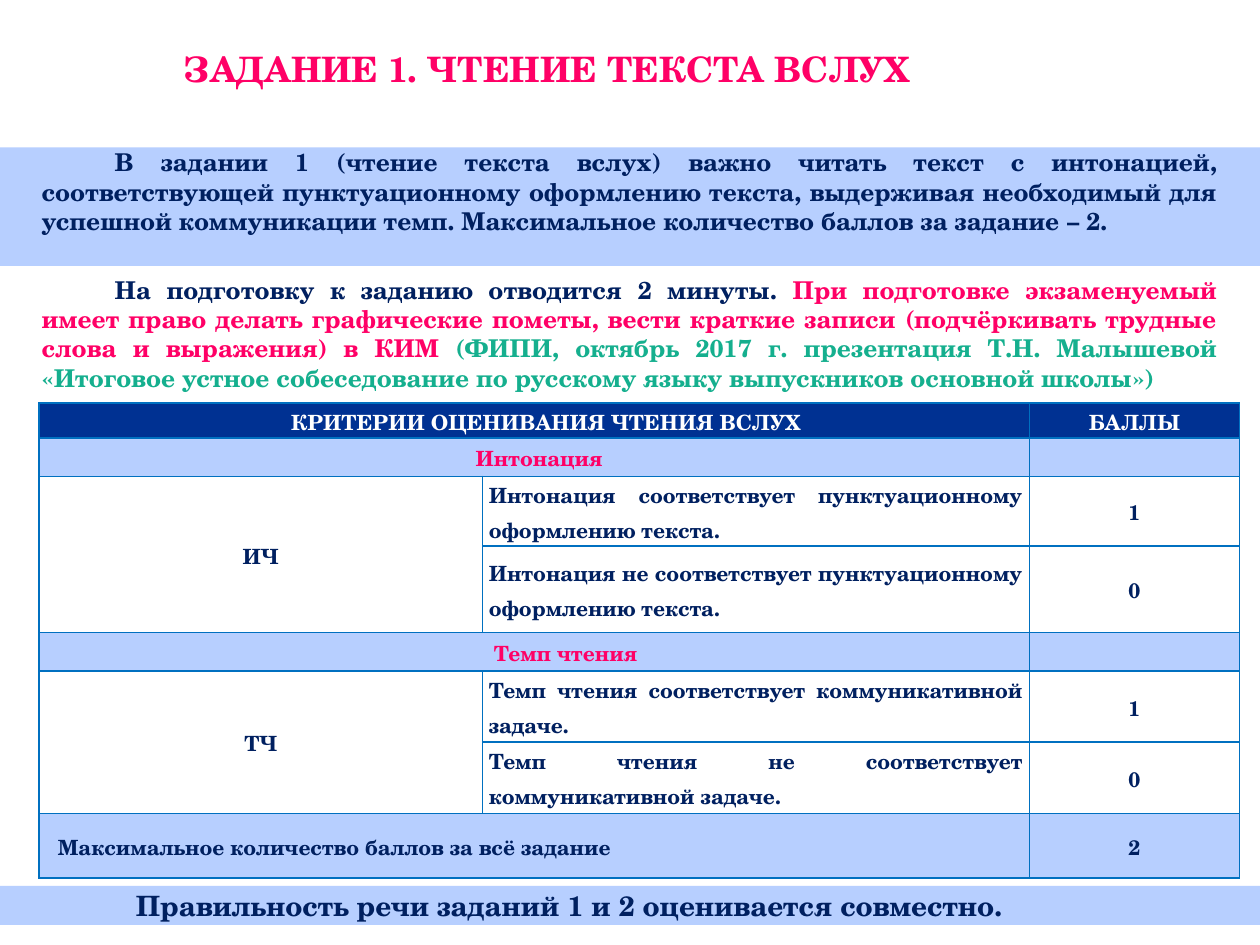
from dataclasses import dataclass

from lxml.etree import SubElement
from pptx import Presentation
from pptx.dml.color import RGBColor
from pptx.enum.shapes import MSO_SHAPE as Shape
from pptx.enum.text import MSO_ANCHOR as Anchor, MSO_AUTO_SIZE as AutoSize, PP_ALIGN as Align
from pptx.oxml.ns import qn
from pptx.util import Inches, Pt


@dataclass(frozen=True)
class Theme:
    """Colours, type sizes and line heights of the slide."""
    font: str = "TeX Gyre Schola"
    navy: str = "002060"
    pink: str = "FF0066"
    green: str = "15AF8E"
    white: str = "FFFFFF"
    pale: str = "B7CFFF"
    header: str = "003192"
    border: str = "0070C0"
    title: float = 20
    note: float = 16
    body: float = 14
    cell: float = 12
    body_line: float = 16.75
    cell_line: float = 19.8


THEME = Theme()


def write(paragraph, *parts, size, color=THEME.navy, align=Align.LEFT,
          left=0, first=0, before=0, line=None):
    """Fill a paragraph with text or (text, colour) parts in one format."""
    properties = paragraph._p.get_or_add_pPr()
    properties.set("marL", str(Inches(left)))
    properties.set("indent", str(Inches(first)))
    SubElement(properties, qn("a:buNone"))
    paragraph.alignment = align
    paragraph.space_before = Pt(before)
    if line:
        paragraph.line_spacing = Pt(line)
    for part in parts:
        text, tint = part if isinstance(part, tuple) else (part, color)
        run = paragraph.add_run()
        run.text = text
        run.font.name = THEME.font
        run.font.size = Pt(size)
        run.font.bold = True
        run.font.color.rgb = RGBColor.from_string(tint)


def place(part, box):
    """Move a part to a box of left, top, width and height in inches."""
    part.left, part.top, part.width, part.height = map(Inches, box)


def add_band(slide, box):
    """Add a pale strip behind the text."""
    band = slide.shapes.add_shape(Shape.RECTANGLE, *map(Inches, box))
    band.shadow.inherit = False
    band.fill.solid()
    band.fill.fore_color.rgb = RGBColor.from_string(THEME.pale)
    band.line.fill.background()
    slide.shapes._spTree.insert(2, band._element)
    return band


def add_heading(slide, box):
    """Set the title of the task."""
    heading = slide.shapes.title
    place(heading, box)
    frame = heading.text_frame
    frame.auto_size = AutoSize.NONE
    frame.vertical_anchor = Anchor.MIDDLE
    frame.margin_left = frame.margin_right = frame.margin_top = frame.margin_bottom = 0
    write(frame.paragraphs[0], "ЗАДАНИЕ 1. ЧТЕНИЕ ТЕКСТА ВСЛУХ",
          size=THEME.title, color=THEME.pink)


def add_instructions(slide, box):
    """Set the two paragraphs that explain the task."""
    instructions = slide.placeholders[1]
    place(instructions, box)
    frame = instructions.text_frame
    frame.auto_size = AutoSize.NONE
    frame.vertical_anchor = Anchor.TOP
    frame.margin_top = Inches(0.08)
    style = dict(size=THEME.body, align=Align.JUSTIFY, first=0.58, line=THEME.body_line)
    write(frame.paragraphs[0],
          "В задании 1 (чтение текста вслух) важно читать текст с интонацией, "
          "соответствующей пунктуационному оформлению текста, выдерживая необходимый для "
          "успешной коммуникации темп. Максимальное количество баллов за задание – 2.",
          **style)
    write(frame.add_paragraph(),
          "На подготовку к заданию отводится 2 минуты. ",
          ("При подготовке экзаменуемый имеет право делать графические пометы, вести краткие "
           "записи (подчёркивать трудные слова и выражения) в КИМ ", THEME.pink),
          ("(ФИПИ, октябрь 2017 г. презентация Т.Н. Малышевой «Итоговое устное собеседование "
           "по русскому языку выпускников основной школы»)", THEME.green),
          before=22.5, **style)


def format_cell(cell, fill, margin):
    """Give a cell its borders, fill, margins and anchor."""
    properties = cell._tc.get_or_add_tcPr()
    for side in ("lnL", "lnR", "lnT", "lnB"):
        edge = SubElement(properties, qn(f"a:{side}"), w=str(Pt(1)))
        paint = SubElement(edge, qn("a:solidFill"))
        SubElement(paint, qn("a:srgbClr"), val=THEME.border)
    cell.fill.solid()
    cell.fill.fore_color.rgb = RGBColor.from_string(fill)
    cell.margin_left = cell.margin_right = Inches(margin)
    cell.margin_top = cell.margin_bottom = 0
    cell.vertical_anchor = Anchor.MIDDLE


def add_criteria(slide, box):
    """Add the table of reading criteria and points."""
    centre, justify = Align.CENTER, Align.JUSTIFY
    wide = {
        0: ("КРИТЕРИИ ОЦЕНИВАНИЯ ЧТЕНИЯ ВСЛУХ", "БАЛЛЫ", THEME.header, THEME.white, centre, 0.19),
        1: ("Интонация", "", THEME.pale, THEME.pink, centre, 0.08),
        4: ("Темп чтения", "", THEME.pale, THEME.pink, centre, 0.5),
        7: ("Максимальное количество баллов за всё задание", "2",
            THEME.pale, THEME.navy, justify, 0.1),
    }
    scored = {
        2: ("ИЧ", "Интонация соответствует пунктуационному оформлению текста.", "1"),
        3: ("", "Интонация не соответствует пунктуационному оформлению текста.", "0"),
        5: ("ТЧ", "Темп чтения соответствует коммуникативной задаче.", "1"),
        6: ("", "Темп чтения не соответствует коммуникативной задаче.", "0"),
    }
    widths = (3.52, 4.34, 1.67)
    heights = (0.26, 0.26, 0.48, 0.69, 0.26, 0.56, 0.57, 0.51)
    criteria = slide.shapes.add_table(len(heights), len(widths), *map(Inches, box)).table
    for column, width in zip(criteria.columns, widths):
        column.width = Inches(width)
    for index, height in enumerate(heights):
        criteria.rows[index].height = Inches(height)
        if index in wide:
            label, points, fill, color, align, left = wide[index]
            texts, aligns, indents = (label, "", points), (align, centre, centre), (left, 0, 0)
        else:
            texts, aligns, indents = scored[index], (centre, justify, centre), (0, 0, 0)
            fill, color = THEME.white, THEME.navy
        for column, text in enumerate(texts):
            cell = criteria.cell(index, column)
            format_cell(cell, fill, 0.07 if column == 2 else 0.05)
            write(cell.text_frame.paragraphs[0], *filter(None, [text]), size=THEME.cell,
                  color=color, align=aligns[column], left=indents[column], line=THEME.cell_line)
    for index in wide:
        criteria.cell(index, 0).merge(criteria.cell(index, 1))
    for index in (2, 5):
        criteria.cell(index, 0).merge(criteria.cell(index + 1, 0))


def add_note(slide, box):
    """Add the closing strip with its remark."""
    frame = add_band(slide, box).text_frame
    frame.word_wrap = True
    frame.vertical_anchor = Anchor.MIDDLE
    write(frame.paragraphs[0], "Правильность речи заданий 1 и 2 оценивается совместно.",
          size=THEME.note, left=0.98)


def main():
    """Build and save the slide."""
    deck = Presentation()
    deck.slide_width, deck.slide_height = Inches(10), Inches(7.5)
    slide = deck.slides.add_slide(deck.slide_layouts[1])
    add_band(slide, (0, 1.17, 10, 0.94))
    add_note(slide, (0, 7.03, 10, 0.31))
    add_instructions(slide, (0.23, 1.09, 9.53, 5.86))
    add_heading(slide, (1.46, 0.23, 6.12, 0.63))
    add_criteria(slide, (0.31, 3.2, 9.53, 3.59))
    deck.save("out.pptx")


if __name__ == "__main__":
    main()
